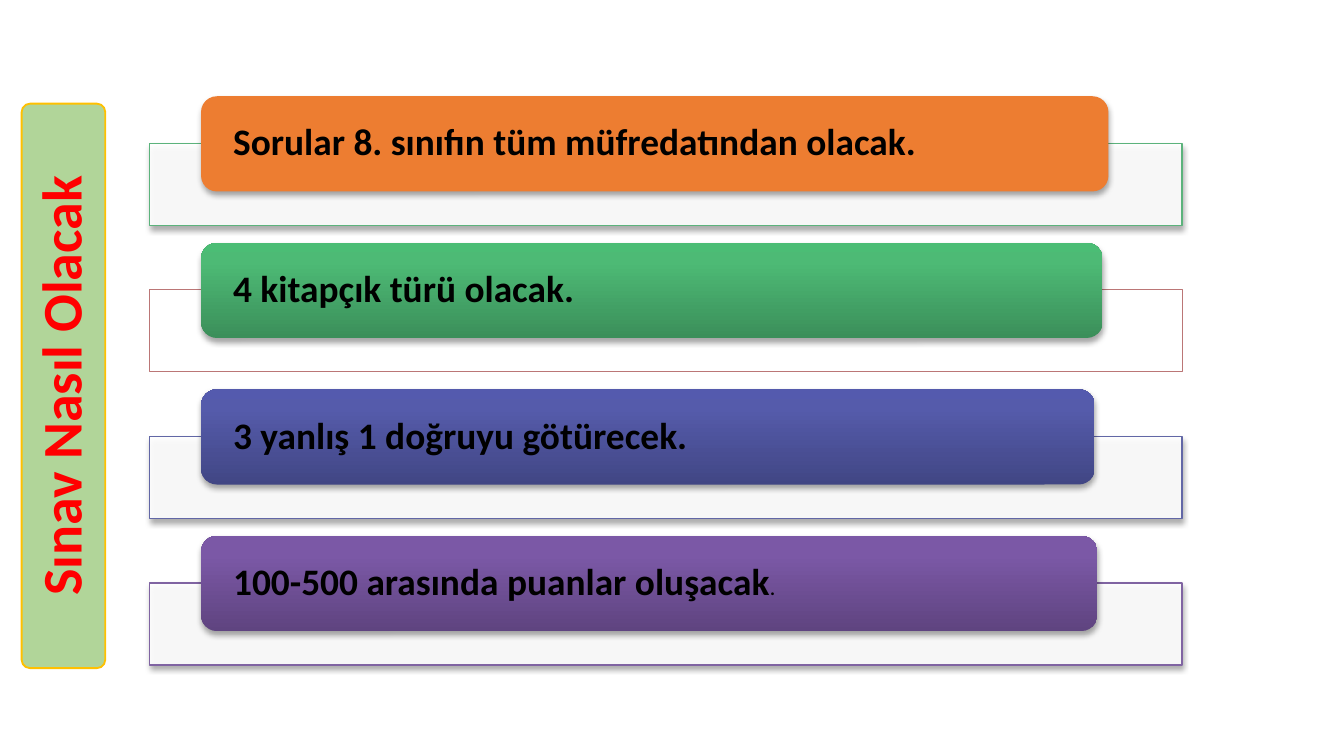
from dataclasses import dataclass

from lxml import etree
from pptx import Presentation
from pptx import util as u
from pptx.dml.color import RGBColor
from pptx.enum import shapes, text
from pptx.oxml import parse_xml
from pptx.oxml.ns import nsdecls, qn

FONT = "Calibri"
ROW_PITCH = 2.77


@dataclass
class Row:
    label: str
    width: float
    fill: tuple[str, ...]  # one solid colour, or gradient colours from bottom to top
    line: str
    line_width: float = 0.75
    bar_shadow: bool = True
    ending: str = ""


ROWS = [
    Row("Sorular 8. sınıfın tüm müfredatından olacak.", 17.15, ("ED7D31",), "5CB37C"),
    Row("4 kitapçık türü olacak.", 17.04, ("3B8F5A", "4DBA75", "4BBD75"), "BB7676",
        line_width=0.5, bar_shadow=False),
    Row("3 yanlış 1 doğruyu götürecek.", 16.89, ("414684", "555BAB", "545AAE"), "6267A6"),
    Row("100-500 arasında puanlar oluşacak", 16.94, ("5F4480", "7B58A6", "7C57A8"), "8064A2",
        ending="."),
]


def color(value: str) -> RGBColor:
    return RGBColor.from_string(value)


def add_box(slide, kind, left: float, top: float, width: float, height: float):
    shape = slide.shapes.add_shape(kind, u.Cm(left), u.Cm(top), u.Cm(width), u.Cm(height))
    shape.shadow.inherit = False
    return shape


def fill_translucent(shape, value: str) -> None:
    shape.fill.solid()
    shape.fill.fore_color.rgb = color(value)
    rgb = shape._element.spPr.find(qn("a:solidFill"))[0]
    etree.SubElement(rgb, qn("a:alpha")).set("val", "90000")


def fill_gradient(shape, colors: tuple[str, ...]) -> None:
    shape.fill.gradient()
    shape.fill.gradient_angle = 90
    stops = shape._element.spPr.find(qn("a:gradFill")).find(qn("a:gsLst"))
    for stop in list(stops):
        stops.remove(stop)
    for position, value in zip((0, 80, 100), colors):
        stop = etree.SubElement(stops, qn("a:gs"), pos=str(position * 1000))
        etree.SubElement(stop, qn("a:srgbClr"), val=value)


def set_outline(shape, value: str, width: float) -> None:
    shape.line.color.rgb = color(value)
    shape.line.width = u.Pt(width)


def add_shadow(shape) -> None:
    effects = shape._element.spPr.find(qn("a:effectLst"))
    effects.append(parse_xml(
        f'<a:outerShdw {nsdecls("a")} blurRad="40000" dist="23000" dir="5400000" '
        'rotWithShape="0"><a:srgbClr val="000000"><a:alpha val="35000"/></a:srgbClr>'
        '</a:outerShdw>'))


def format_run(run, size: float, value: str) -> None:
    run.font.name = FONT
    run.font.size = u.Pt(size)
    run.font.bold = True
    run.font.color.rgb = color(value)


def write_text(shape, words: str, alignment, margin: float, size: float, value: str):
    frame = shape.text_frame
    frame.word_wrap = True
    frame.vertical_anchor = text.MSO_ANCHOR.MIDDLE
    frame.margin_left = frame.margin_right = u.Cm(margin)
    frame.margin_top = frame.margin_bottom = 0
    frame.text = words
    paragraph = frame.paragraphs[0]
    paragraph.alignment = alignment
    paragraph.line_spacing = 0.9
    format_run(paragraph.runs[0], size, value)
    return paragraph


def add_row(slide, row: Row, offset: float) -> None:
    # Wide bar behind the card
    bar = add_box(slide, shapes.MSO_SHAPE.RECTANGLE, 2.83, 2.71 + offset, 19.51, 1.55)
    fill_translucent(bar, "FFFFFF")
    set_outline(bar, row.line, row.line_width)
    if row.bar_shadow:
        add_shadow(bar)

    # Coloured card with its statement
    card = add_box(slide, shapes.MSO_SHAPE.ROUNDED_RECTANGLE, 3.8, 1.82 + offset, row.width, 1.8)
    if len(row.fill) == 1:
        card.fill.solid()
        card.fill.fore_color.rgb = color(row.fill[0])
    else:
        fill_gradient(card, row.fill)
    card.line.fill.background()
    add_shadow(card)
    paragraph = write_text(card, row.label, text.PP_ALIGN.LEFT, 0.52, 20, "000000")
    if row.ending:
        run = paragraph.add_run()
        run.text = row.ending
        format_run(run, 10, "000000")


def add_side_panel(slide) -> None:
    # Panel whose heading reads upwards
    panel = add_box(slide, shapes.MSO_SHAPE.ROUNDED_RECTANGLE, 0.41, 1.96, 1.58, 10.67)
    panel.adjustments[0] = 0.1
    fill_translucent(panel, "A9D18E")
    set_outline(panel, "FFC000", 1)
    write_text(panel, "Sınav Nasıl Olacak", text.PP_ALIGN.CENTER, 0, 30, "FF0000")
    panel.text_frame._txBody.bodyPr.set("vert", "vert270")


def main() -> None:
    presentation = Presentation()
    presentation.slide_width, presentation.slide_height = u.Cm(25.4), u.Cm(14.29)
    slide = presentation.slides.add_slide(presentation.slide_layouts[6])
    for index, row in enumerate(ROWS):
        add_row(slide, row, index * ROW_PITCH)
    add_side_panel(slide)
    presentation.save("out.pptx")


if __name__ == "__main__":
    main()
